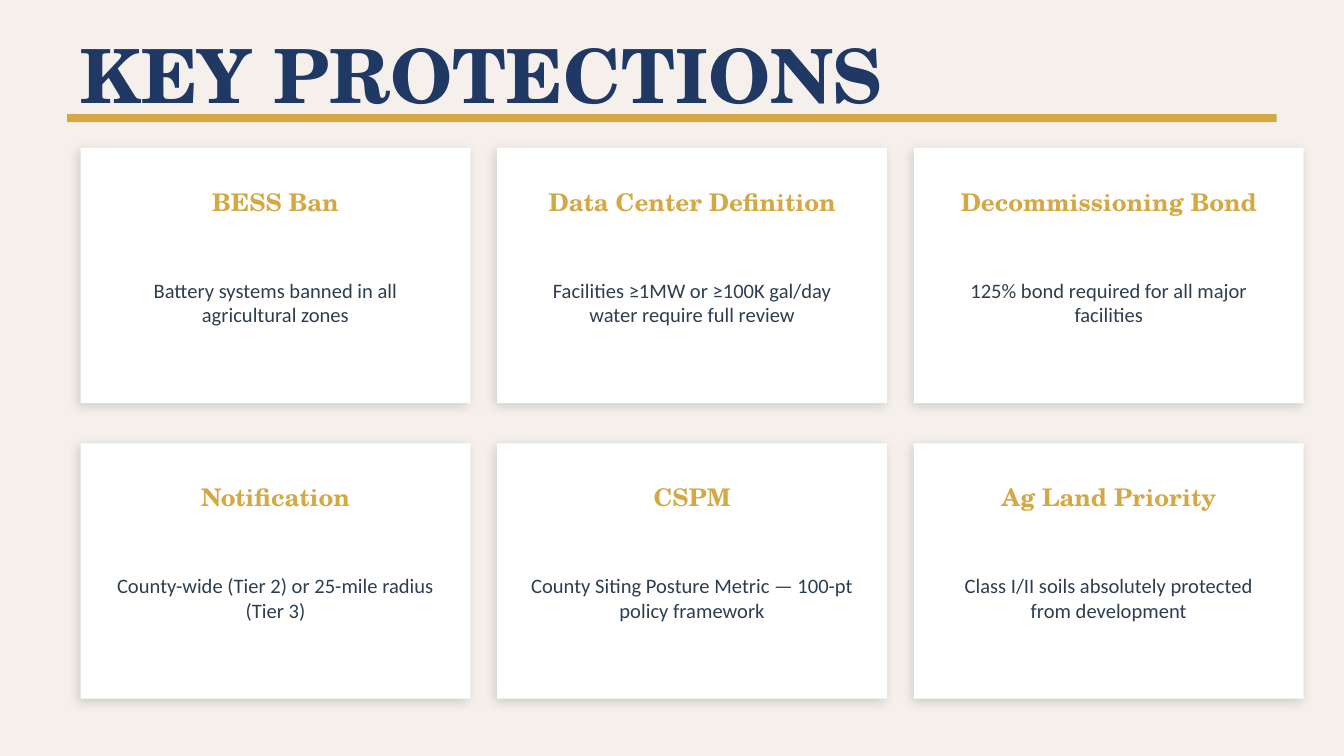
from dataclasses import dataclass

from lxml import etree
from pptx import Presentation, util as u
from pptx.dml.color import RGBColor
from pptx.enum import shapes, text
from pptx.oxml.ns import qn


@dataclass(frozen=True)
class Style:
    font: str
    size: int
    color: str
    bold: bool = False
    align: text.PP_ALIGN = text.PP_ALIGN.CENTER


@dataclass(frozen=True)
class Theme:
    background: str = "F5F0EB"
    gold: str = "D4A843"
    card: str = "FFFFFF"
    shadow: str = "000000"
    title: Style = Style("TeX Gyre Schola", 40, "1F3864", True, text.PP_ALIGN.LEFT)
    heading: Style = Style("TeX Gyre Schola", 13, "D4A843", True)
    body: Style = Style("Calibri", 11, "2C3E50")


@dataclass(frozen=True)
class Box:
    left: float
    top: float
    width: float
    height: float

    def emu(self) -> list[int]:
        return [u.Inches(v) for v in (self.left, self.top, self.width, self.height)]


@dataclass(frozen=True)
class Grid:
    left: float = 0.6
    top: float = 1.1
    columns: int = 3
    cell_width: float = 2.9
    cell_height: float = 1.9
    column_gap: float = 0.2
    row_gap: float = 0.3

    def cell(self, index: int) -> Box:
        row, column = divmod(index, self.columns)
        return Box(
            self.left + column * (self.cell_width + self.column_gap),
            self.top + row * (self.cell_height + self.row_gap),
            self.cell_width,
            self.cell_height,
        )


@dataclass(frozen=True)
class Protection:
    heading: str
    body: str


THEME = Theme()
GRID = Grid()
PADDING = 0.15
PROTECTIONS = [
    Protection("BESS Ban", "Battery systems banned in all agricultural zones"),
    Protection("Data Center Definition", "Facilities ≥1MW or ≥100K gal/day water require full review"),
    Protection("Decommissioning Bond", "125% bond required for all major facilities"),
    Protection("Notification", "County-wide (Tier 2) or 25-mile radius (Tier 3)"),
    Protection("CSPM", "County Siting Posture Metric — 100-pt policy framework"),
    Protection("Ag Land Priority", "Class I/II soils absolutely protected from development"),
]


def add_rect(s, box: Box, color: str):
    sp = s.shapes.add_shape(shapes.MSO_SHAPE.RECTANGLE, *box.emu())
    sp.shadow.inherit = False
    sp.fill.solid()
    sp.fill.fore_color.rgb = RGBColor.from_string(color)
    sp.line.fill.background()
    return sp


def add_shadow(sp) -> None:
    effects = sp.element.spPr.find(qn("a:effectLst"))
    shadow = etree.SubElement(
        effects, qn("a:outerShdw"), blurRad=str(u.Pt(6)), dist=str(u.Pt(2)),
        dir=str(135 * 60000), algn="bl", rotWithShape="0",
    )
    color = etree.SubElement(shadow, qn("a:srgbClr"), val=THEME.shadow)
    etree.SubElement(color, qn("a:alpha"), val="15000")


def add_text(s, box: Box, content: str, style: Style) -> None:
    tf = s.shapes.add_textbox(*box.emu()).text_frame
    tf.word_wrap = True
    tf.vertical_anchor = text.MSO_ANCHOR.MIDDLE
    tf.text = content
    p = tf.paragraphs[0]
    p.alignment = style.align
    r = p.runs[0]
    r.font.name = style.font
    r.font.size = u.Pt(style.size)
    r.font.bold = style.bold
    r.font.color.rgb = RGBColor.from_string(style.color)


def add_card(s, cell: Box, protection: Protection) -> None:
    add_shadow(add_rect(s, cell, THEME.card))
    left, width = cell.left + PADDING, cell.width - 2 * PADDING
    add_text(s, Box(left, cell.top + 0.2, width, 0.4), protection.heading, THEME.heading)
    add_text(s, Box(left, cell.top + 0.65, width, 1), protection.body, THEME.body)


def main() -> None:
    prs = Presentation()
    prs.slide_width = u.Inches(10)
    prs.slide_height = prs.slide_width * 9 // 16
    s = prs.slides.add_slide(prs.slide_layouts[6])
    s.background.fill.solid()
    s.background.fill.fore_color.rgb = RGBColor.from_string(THEME.background)
    add_text(s, Box(0.5, 0.3, 9, 0.5), "KEY PROTECTIONS", THEME.title)
    add_rect(s, Box(0.5, 0.85, 9, 0.06), THEME.gold)
    for index, protection in enumerate(PROTECTIONS):
        add_card(s, GRID.cell(index), protection)
    prs.save("out.pptx")


if __name__ == "__main__":
    main()
